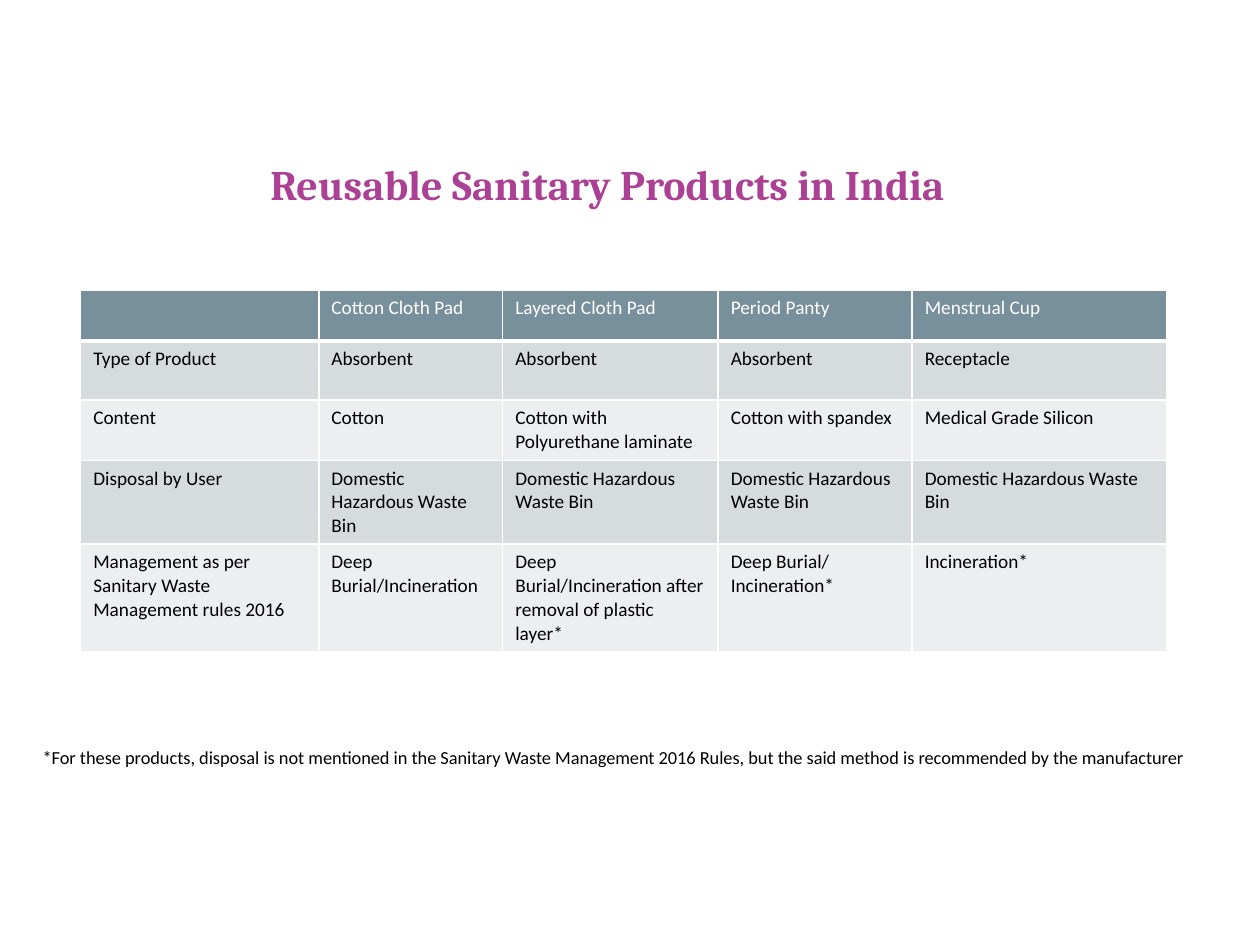
from typing import NamedTuple

from lxml.etree import SubElement
from pptx import Presentation
from pptx.dml.color import RGBColor
from pptx.enum.text import MSO_AUTO_SIZE, PP_ALIGN
from pptx.oxml.ns import qn
from pptx.util import Inches, Pt

WHITE = RGBColor(0xFF, 0xFF, 0xFF)
BLACK = RGBColor(0x00, 0x00, 0x00)
PURPLE = RGBColor(0xAB, 0x40, 0x95)
SLATE = RGBColor(0x78, 0x90, 0x9C)
BAND_DARK = RGBColor(0xD6, 0xDB, 0xDE)
BAND_LIGHT = RGBColor(0xEC, 0xEE, 0xEF)


class Style(NamedTuple):
    font: str
    size: float
    color: RGBColor
    bold: bool = False


class Box(NamedTuple):
    left: float
    top: float
    width: float
    height: float


HEADER = Style("Calibri", 11, WHITE)
BODY = Style("Calibri", 11, BLACK)
TITLE = Style("Cambria", 24, PURPLE, True)
FOOTNOTE = Style("Calibri", 10.5, BLACK)

WASTE_BIN = "Domestic Hazardous Waste Bin"
ROWS = [
    ["", "Cotton Cloth Pad", "Layered Cloth Pad", "Period Panty", "Menstrual Cup"],
    ["Type of Product", "Absorbent", "Absorbent", "Absorbent", "Receptacle"],
    ["Content", "Cotton", "Cotton with Polyurethane laminate",
     "Cotton with spandex", "Medical Grade Silicon"],
    ["Disposal by User"] + [WASTE_BIN] * 4,
    ["Management as per Sanitary Waste Management rules 2016",
     "Deep Burial/Incineration",
     "Deep Burial/Incineration after removal of plastic layer*",
     "Deep Burial/ Incineration*", "Incineration*"],
]
COL_WIDTHS = [1.89, 1.46, 1.71, 1.54, 2.02]
ROW_HEIGHTS = [0.4, 0.47, 0.47, 0.65, 0.83]


def style_paragraph(p, style: Style) -> None:
    for r in p.runs:
        r.font.name = style.font
        r.font.size = Pt(style.size)
        r.font.bold = style.bold
        r.font.color.rgb = style.color


def set_borders(cell, bottom: float) -> None:
    """Draw white borders, 1 pt on every side but the bottom."""
    tc_pr = cell._tc.get_or_add_tcPr()
    widths = {"a:lnL": 1, "a:lnR": 1, "a:lnT": 1, "a:lnB": bottom}
    for i, (tag, width) in enumerate(widths.items()):
        ln = SubElement(tc_pr, qn(tag), w=str(Pt(width)))
        fill = SubElement(ln, qn("a:solidFill"))
        SubElement(fill, qn("a:srgbClr"), val=str(WHITE))
        tc_pr.insert(i, ln)  # borders come before the cell fill


def add_product_table(s, box: Box) -> None:
    table = s.shapes.add_table(len(ROWS), len(COL_WIDTHS),
                               *map(Inches, box)).table
    for col, width in zip(table.columns, COL_WIDTHS):
        col.width = Inches(width)
    for i, (texts, height) in enumerate(zip(ROWS, ROW_HEIGHTS)):
        table.rows[i].height = Inches(height)
        is_header = i == 0
        band = BAND_DARK if i % 2 else BAND_LIGHT
        for j, text in enumerate(texts):
            cell = table.cell(i, j)
            cell.text_frame.text = text
            style_paragraph(cell.text_frame.paragraphs[0],
                            HEADER if is_header else BODY)
            cell.fill.solid()
            cell.fill.fore_color.rgb = SLATE if is_header else band
            set_borders(cell, bottom=3 if is_header else 1)


def add_text(s, box: Box, text: str, style: Style, wrap: bool = True):
    tf = s.shapes.add_textbox(*map(Inches, box)).text_frame
    tf.word_wrap = wrap
    tf.auto_size = MSO_AUTO_SIZE.SHAPE_TO_FIT_TEXT
    tf.text = text
    p = tf.paragraphs[0]
    style_paragraph(p, style)
    return p


def main() -> None:
    prs = Presentation()
    prs.slide_width, prs.slide_height = Inches(10), Inches(7.5)
    s = prs.slides.add_slide(prs.slide_layouts[6])
    add_product_table(s, Box(0.64, 2.3, sum(COL_WIDTHS), sum(ROW_HEIGHTS)))
    title = add_text(s, Box(1.96, 1.14, 5.72, 1.01),
                     "Reusable Sanitary Products in India", TITLE, wrap=False)
    title.alignment = PP_ALIGN.CENTER
    title.line_spacing = Pt(33.6)
    add_text(s, Box(0.24, 5.87, 9.39, 0.28),
             "*For these products, disposal is not mentioned in the Sanitary Waste "
             "Management 2016 Rules, but the said method is recommended by the "
             "manufacturer", FOOTNOTE)
    prs.save("out.pptx")


if __name__ == "__main__":
    main()
